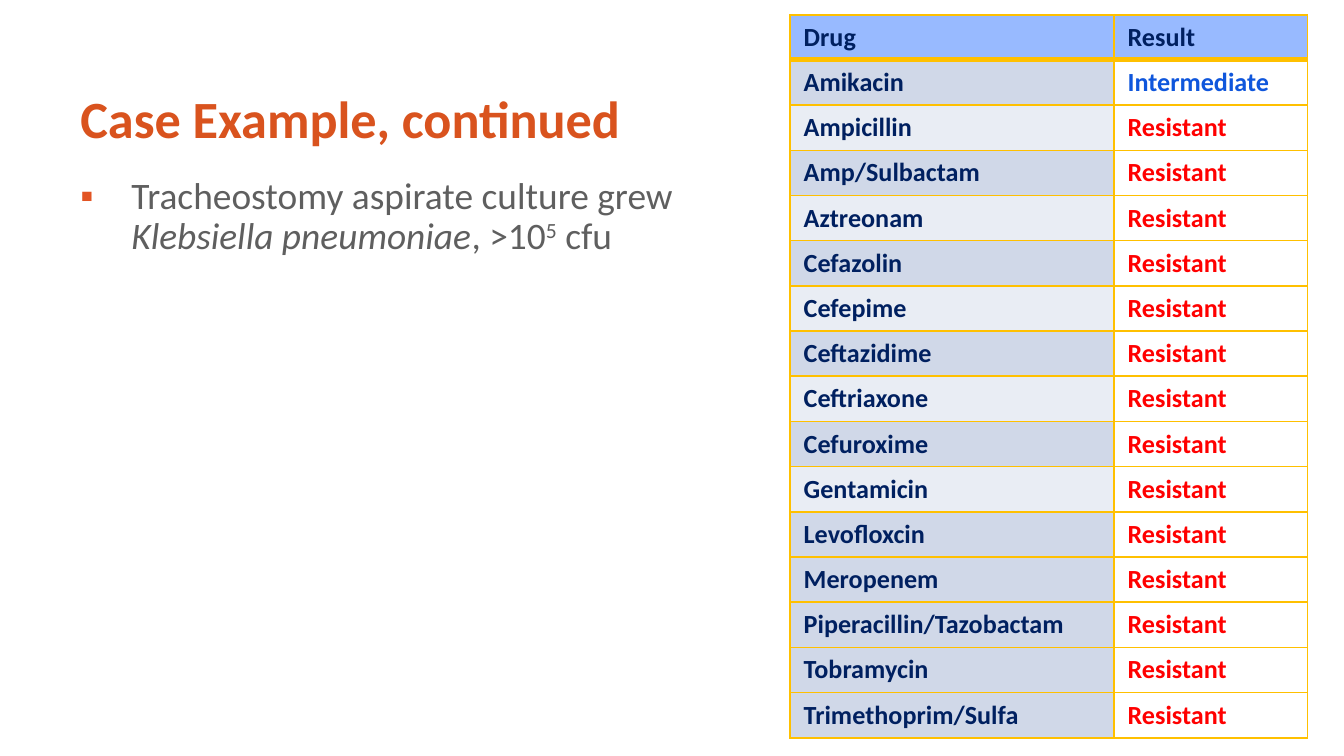
from lxml import etree
from pptx import Presentation
from pptx.dml.color import RGBColor
from pptx.enum.text import MSO_ANCHOR
from pptx.oxml.ns import qn
from pptx.util import Inches, Pt

BOTTOM, TOP = MSO_ANCHOR.BOTTOM, MSO_ANCHOR.TOP

ORANGE = RGBColor(0xD9, 0x53, 0x1E)
BULLET = RGBColor(0xE2, 0x54, 0x23)
GRAY = RGBColor(0x5F, 0x5F, 0x5F)
NAVY = RGBColor(0x00, 0x20, 0x60)
BLUE = RGBColor(0x0F, 0x56, 0xDC)
RED = RGBColor(0xFF, 0x00, 0x00)
GOLD = RGBColor(0xFF, 0xC0, 0x00)
HEADER = RGBColor(0x98, 0xBA, 0xFF)
DARK_BAND = RGBColor(0xD0, 0xD8, 0xE8)
LIGHT_BAND = RGBColor(0xE9, 0xED, 0xF4)
WHITE = RGBColor(0xFF, 0xFF, 0xFF)

DRUGS = [
    "Amikacin", "Ampicillin", "Amp/Sulbactam", "Aztreonam", "Cefazolin",
    "Cefepime", "Ceftazidime", "Ceftriaxone", "Cefuroxime", "Gentamicin",
    "Levofloxcin", "Meropenem", "Piperacillin/Tazobactam", "Tobramycin",
    "Trimethoprim/Sulfa",
]
BANDED_ROWS = 10  # light and dark alternate up to here, then all dark


class SlideBuilder:
    font_name = "Calibri"

    def __init__(self, page):
        self.page = page

    def add_run(self, para, text, size, color, bold=False, italic=False, baseline=0):
        span = para.add_run()
        span.text = text
        font = span.font
        font.name, font.size = self.font_name, Pt(size)
        font.bold, font.italic = bold, italic
        font.color.rgb = color
        if baseline:
            span._r.get_or_add_rPr().set("baseline", str(baseline * 1000))

    def add_text(self, left, top, width, height, anchor, line_spacing):
        box = self.page.shapes.add_textbox(
            Inches(left), Inches(top), Inches(width), Inches(height))
        frame = box.text_frame
        frame.word_wrap = True
        frame.vertical_anchor = anchor
        para = frame.paragraphs[0]
        para.line_spacing = line_spacing
        return para

    def set_bullet(self, para, symbol, color, indent):
        props = para._p.get_or_add_pPr()
        props.set("marL", str(Inches(indent)))
        props.set("indent", str(-Inches(indent)))
        bullet_color = etree.SubElement(props, qn("a:buClr"))
        etree.SubElement(bullet_color, qn("a:srgbClr"), val=str(color))
        etree.SubElement(props, qn("a:buFont"), typeface="Arial")
        etree.SubElement(props, qn("a:buChar"), char=symbol)

    def set_borders(self, cell, color, top=1, bottom=1):
        props = cell._tc.get_or_add_tcPr()
        for side, width in (("L", 1), ("R", 1), ("T", top), ("B", bottom)):
            line = etree.SubElement(props, qn(f"a:ln{side}"), w=str(Pt(width)))
            fill = etree.SubElement(line, qn("a:solidFill"))
            etree.SubElement(fill, qn("a:srgbClr"), val=str(color))

    def add_table(self, left, top, col_widths, height, rows):
        frame = self.page.shapes.add_table(
            len(rows), len(col_widths), Inches(left), Inches(top),
            Inches(sum(col_widths)), Inches(height))
        table = frame.table
        table.horz_banding = False
        for column, width in zip(table.columns, col_widths):
            column.width = Inches(width)
        for index, row in enumerate(rows):
            table.rows[index].height = Inches(height / len(rows))
            for cell, (text, color, fill) in zip(table.rows[index].cells, row):
                self.set_borders(cell, GOLD, top=3 if index == 1 else 1,
                                 bottom=3 if index == 0 else 1)
                cell.fill.solid()
                cell.fill.fore_color.rgb = fill
                cell.vertical_anchor = TOP
                self.add_run(cell.text_frame.paragraphs[0], text, 14, color, bold=True)


def result_rows():
    rows = [[("Drug", NAVY, HEADER), ("Result", NAVY, HEADER)]]
    for index, drug in enumerate(DRUGS):
        light = index < BANDED_ROWS and index % 2 == 1
        result = ("Intermediate", BLUE) if drug == "Amikacin" else ("Resistant", RED)
        rows.append([(drug, NAVY, LIGHT_BAND if light else DARK_BAND),
                     (*result, WHITE)])
    return rows


def main():
    # Widescreen page, 16:9
    deck = Presentation()
    deck.slide_width = Inches(10)
    deck.slide_height = Inches(10 * 9 / 16)
    builder = SlideBuilder(deck.slides.add_slide(deck.slide_layouts[6]))

    # Title
    title = builder.add_text(0.5, 0.22, 9, 0.94, BOTTOM, Pt(30))
    builder.add_run(title, "Case Example, continued", 28, ORANGE, bold=True)

    # Culture finding
    finding = builder.add_text(0.5, 1.27, 5.24, 3.65, TOP, 0.9)
    builder.set_bullet(finding, "▪", BULLET, 0.38)
    builder.add_run(finding, "Tracheostomy aspirate culture grew ", 20, GRAY)
    builder.add_run(finding, "Klebsiella pneumoniae", 20, GRAY, italic=True)
    builder.add_run(finding, ", >10", 20, GRAY)
    builder.add_run(finding, "5", 20, GRAY, baseline=30)
    builder.add_run(finding, " cfu", 20, GRAY)

    # Susceptibility results
    builder.add_table(5.88, 0.11, [2.41, 1.44], 5.38, result_rows())

    deck.save("out.pptx")


if __name__ == "__main__":
    main()
